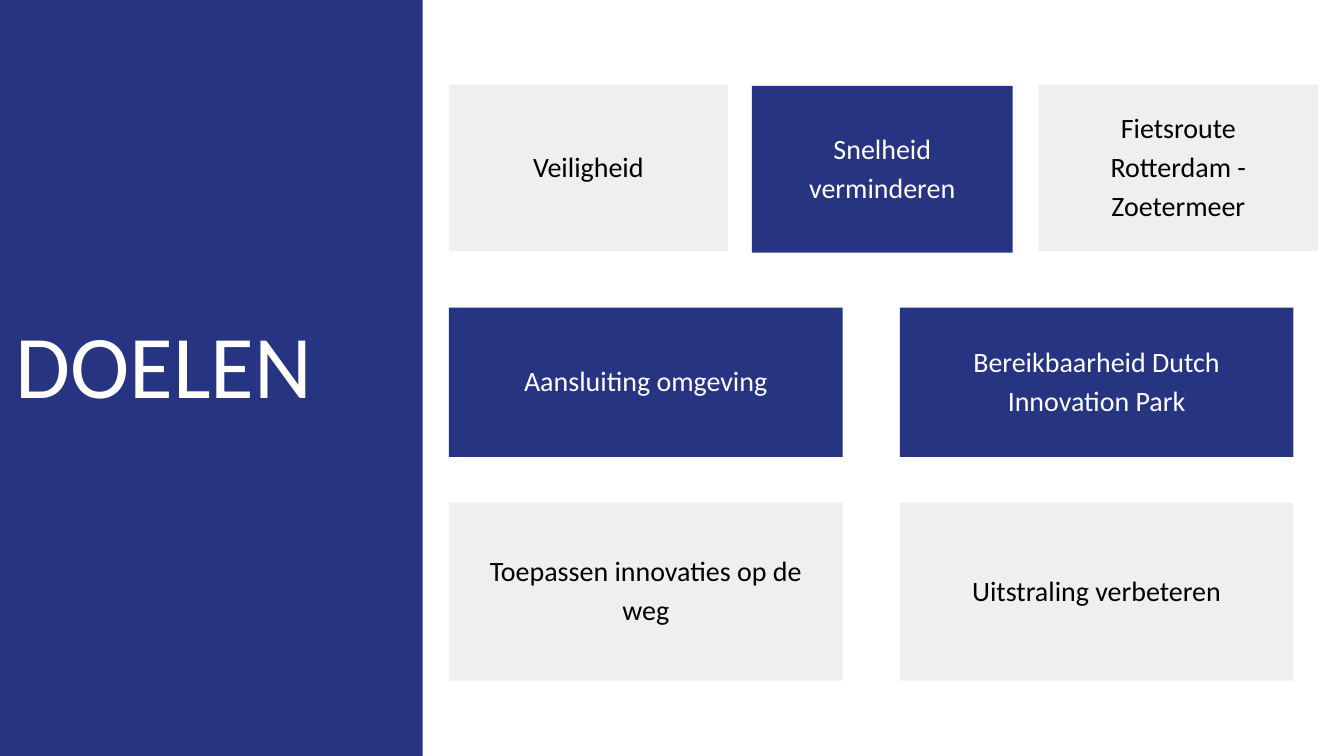
import pptx
import pptx.dml.color
import pptx.enum.shapes
import pptx.enum.text
import pptx.util

Cm = pptx.util.Cm
Pt = pptx.util.Pt

COLOURS = {"blue": "273482", "grey": "F1EEEE", "white": "FFFFFF", "black": "000000"}
TEXT_ON = {"blue": "white", "grey": "black"}
FONT = "Calibri"

LEFT, RIGHT = 16.97, 34.01
WIDE, NARROW = 14.88, 10.54
TOP_ROW, MIDDLE_ROW, BOTTOM_ROW = (3.2, 6.3), (11.63, 5.64), (19, 6.73)

GOALS = [
    ("Veiligheid", "grey", LEFT, NARROW, TOP_ROW),
    ("Snelheid verminderen", "blue", 28.42, 9.86, (3.25, 6.3)),
    ("Fietsroute Rotterdam - Zoetermeer", "grey", 39.27, NARROW, TOP_ROW),
    ("Aansluiting omgeving", "blue", LEFT, WIDE, MIDDLE_ROW),
    ("Bereikbaarheid Dutch Innovation Park", "blue", RIGHT, WIDE, MIDDLE_ROW),
    ("Toepassen innovaties op de weg", "grey", LEFT, WIDE, BOTTOM_ROW),
    ("Uitstraling verbeteren", "grey", RIGHT, WIDE, BOTTOM_ROW),
]


def colour(name):
    return pptx.dml.color.RGBColor.from_string(COLOURS[name])


def add_panel(page, left, top, width, height, fill):
    panel = page.shapes.add_shape(
        pptx.enum.shapes.MSO_SHAPE.RECTANGLE, Cm(left), Cm(top), Cm(width), Cm(height)
    )
    panel.shadow.inherit = False
    panel.fill.solid()
    panel.fill.fore_color.rgb = colour(fill)
    panel.line.fill.background()
    return panel


def write(box, text, size, spacing, text_colour, align, anchor, margins):
    frame = box.text_frame
    frame.text = text
    frame.word_wrap = True
    frame.vertical_anchor = anchor
    side, top, bottom = margins
    frame.margin_left = frame.margin_right = Cm(side)
    frame.margin_top, frame.margin_bottom = Cm(top), Cm(bottom)
    para = frame.paragraphs[0]
    para.alignment = align
    para.line_spacing = Pt(spacing)
    for span in para.runs:
        span.font.name = FONT
        span.font.size = Pt(size)
        span.font.color.rgb = colour(text_colour)


def add_goal(page, text, fill, left, width, row):
    top, height = row
    card = add_panel(page, left, top, width, height, fill)
    write(card, text, 30, 42, TEXT_ON[fill], pptx.enum.text.PP_ALIGN.CENTER,
          pptx.enum.text.MSO_ANCHOR.MIDDLE, (0.71, 0.39, 0.71))


def add_title(page, text):
    box = page.shapes.add_textbox(Cm(0.58), Cm(11.35), Cm(14.81), Cm(4.29))
    write(box, text, 95.8, 124.5, "white", pptx.enum.text.PP_ALIGN.LEFT,
          pptx.enum.text.MSO_ANCHOR.TOP, (0, 0, 0))


def main():
    deck = pptx.Presentation()
    deck.slide_width, deck.slide_height = Cm(50.8), Cm(28.58)
    page = deck.slides.add_slide(deck.slide_layouts[6])
    add_panel(page, 0, 0, 15.98, 28.58, "blue")
    add_title(page, "DOELEN")
    for goal in GOALS:
        add_goal(page, *goal)
    deck.save("out.pptx")


if __name__ == "__main__":
    main()
